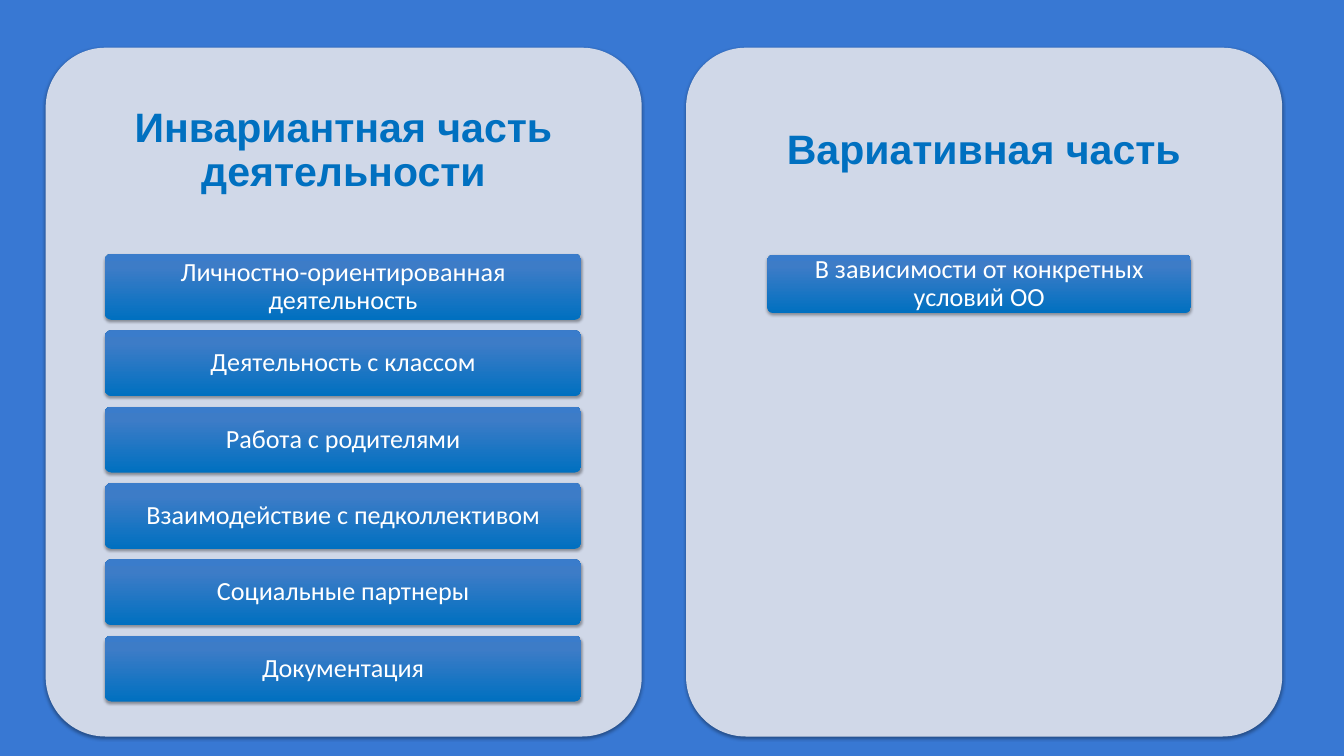
from copy import deepcopy

from lxml import etree
from pptx import Presentation, util as u
from pptx.dml.color import RGBColor
from pptx.enum import shapes, text
from pptx.oxml import parse_xml
from pptx.oxml.ns import qn

BLUE, PANEL, WHITE = "0070C0", "D0D8E8", "FFFFFF"
BAR_STOPS = [(0, BLUE), (0.8, "3D7CC7"), (1, "3A7CCB")]
TITLE = {"size": u.Pt(44), "name": "Arial", "bold": True}
LABEL = {"size": u.Pt(28), "name": "Calibri", "bold": False}
SHADOW = (
    '<a:effectLst xmlns:a="http://schemas.openxmlformats.org/drawingml/2006/main">'
    f'<a:outerShdw blurRad="{u.Pt(3.1)}" dist="{u.Pt(1.8)}" dir="5400000" rotWithShape="0">'
    '<a:srgbClr val="000000"><a:alpha val="35000"/></a:srgbClr>'
    "</a:outerShdw></a:effectLst>"
)


def rounded_card(left, top, width, height):
    """Add a borderless rounded rectangle with a soft shadow below it."""
    card = page.shapes.add_shape(
        shapes.MSO_SHAPE.ROUNDED_RECTANGLE, *map(u.Inches, (left, top, width, height)))
    card.adjustments[0] = 0.1
    card.line.fill.background()
    card._element.spPr.append(parse_xml(SHADOW))
    return card


def write_centred(box, words, font_format, colour, inset_x, inset_y):
    frame = box.text_frame
    frame_format = {
        "word_wrap": True, "vertical_anchor": text.MSO_ANCHOR.MIDDLE,
        "margin_left": u.Inches(inset_x), "margin_right": u.Inches(inset_x),
        "margin_top": u.Inches(inset_y), "margin_bottom": u.Inches(inset_y),
    }
    for name, value in frame_format.items():
        setattr(frame, name, value)
    para = frame.paragraphs[0]
    para.alignment = text.PP_ALIGN.CENTER
    para.line_spacing = 0.9
    span = para.add_run()
    span.text = words
    for name, value in font_format.items():
        setattr(span.font, name, value)
    span.font.color.rgb = RGBColor.from_string(colour)


deck = Presentation()
deck.slide_width, deck.slide_height = u.Inches(20), u.Inches(11.25)
page = deck.slides.add_slide(deck.slide_layouts[6])
page.background.fill.solid()
page.background.fill.fore_color.rgb = RGBColor.from_string("3878D3")

# Two equal columns; each has a title band on top and a stack of bars below
column_left, column_step, column_width = 0.68, 9.53, 8.87
column_top, column_height = 0.71, 10.25
title_height = 0.3 * column_height
row_step = 1.136

# Title, bar offset from the column, first bar top, bar width, bar height, labels
columns = [
    ("Инвариантная часть деятельности", 0.88, 3.78, 7.09, 0.98, [
        "Личностно-ориентированная деятельность",
        "Деятельность с классом",
        "Работа с родителями",
        "Взаимодействие с педколлективом",
        "Социальные партнеры",
        "Документация",
    ]),
    ("Вариативная часть", 1.21, 3.79, 6.3, 0.87, [
        "В зависимости от конкретных условий ОО",
    ]),
]

for column, (title, offset, first_top, bar_width, bar_height, labels) in enumerate(columns):
    left = column_left + column * column_step
    panel = rounded_card(left, column_top, column_width, column_height)
    panel.fill.solid()
    panel.fill.fore_color.rgb = RGBColor.from_string(PANEL)

    heading = page.shapes.add_textbox(
        *map(u.Inches, (left, column_top, column_width, title_height)))
    write_centred(heading, title, TITLE, BLUE, 0.18, 0.18)

    for row, label in enumerate(labels):
        bar = rounded_card(left + offset, first_top + row * row_step, bar_width, bar_height)
        bar.fill.gradient()
        bar.fill.gradient_angle = 90
        stop_list = bar._element.spPr.find(".//" + qn("a:gsLst"))
        stop_list.append(deepcopy(stop_list[-1]))
        for stop, (position, colour) in zip(bar.fill.gradient_stops, BAR_STOPS):
            stop.position = position
            stop.color.rgb = RGBColor.from_string(colour)
        write_centred(bar, label, LABEL, WHITE, 0.1, 0.08)

deck.save("out.pptx")
